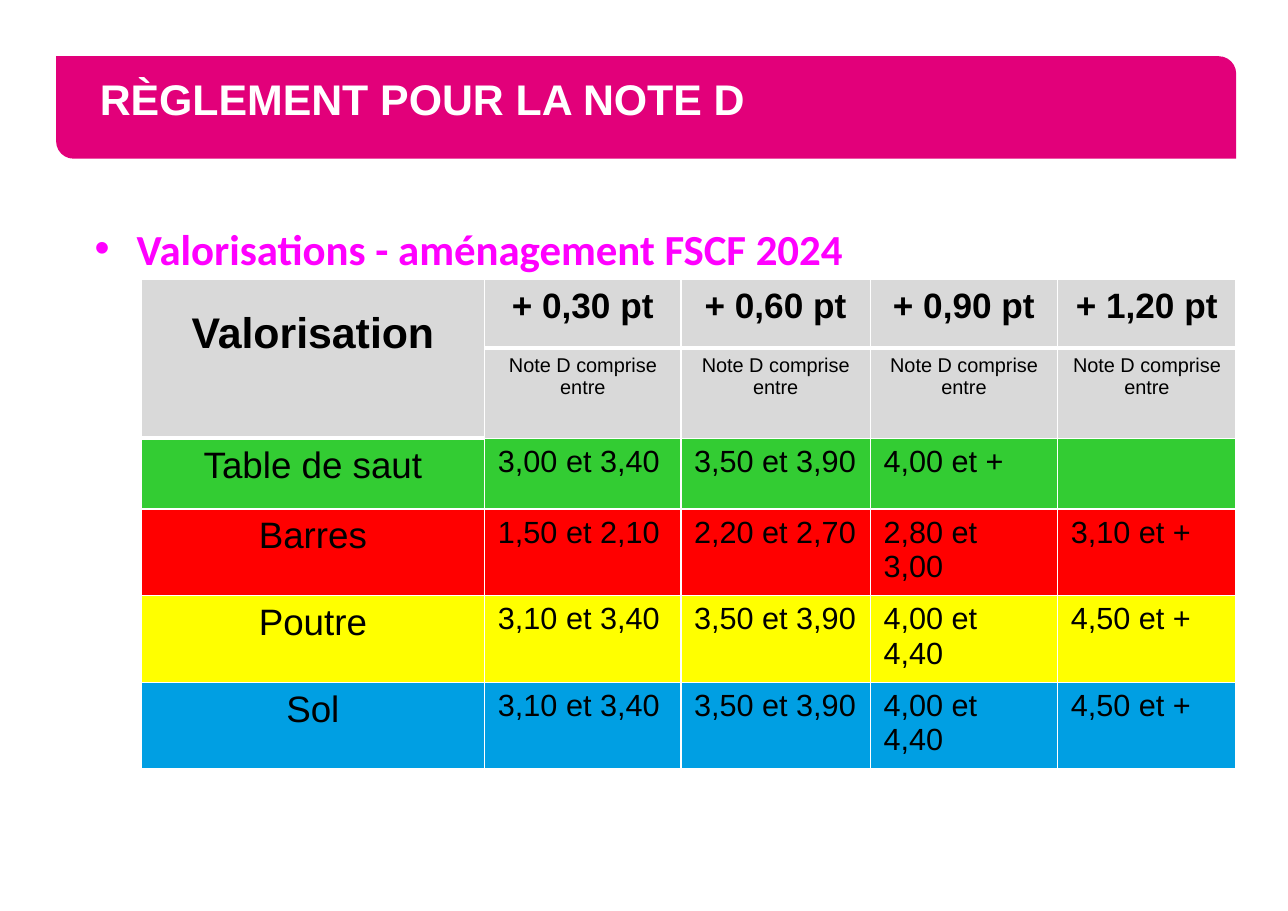
from lxml.etree import SubElement
from pptx import Presentation
from pptx.dml.color import RGBColor
from pptx.enum.shapes import MSO_SHAPE
from pptx.enum.text import MSO_ANCHOR, PP_ALIGN
from pptx.oxml import parse_xml
from pptx.oxml.ns import nsdecls, qn
from pptx.util import Inches, Pt

WIDTH, HEIGHT = 11.69, 8.27
BLACK, WHITE, PINK, MAGENTA, GREY = "000000", "FFFFFF", "E2007A", "FF00FF", "D9D9D9"

# Shares of the slide, in percent
COLUMNS = [26.69, 15.23, 14.71, 14.54, 13.86]
ROWS = [7.5, 9.79] + [7.74] * 4
BONUSES = ["+ 0,30 pt", "+ 0,60 pt", "+ 0,90 pt", "+ 1,20 pt"]
APPARATUS = [
    ("Table de saut", "33CC33", ["3,00 et 3,40", "3,50 et 3,90", "4,00 et +", ""]),
    ("Barres", "FF0000", ["1,50 et 2,10", "2,20 et 2,70", "2,80 et 3,00", "3,10 et +"]),
    ("Poutre", "FFFF00", ["3,10 et 3,40", "3,50 et 3,90", "4,00 et 4,40", "4,50 et +"]),
    ("Sol", "009FE3", ["3,10 et 3,40", "3,50 et 3,90", "4,00 et 4,40", "4,50 et +"]),
]


def across(percent):
    return Inches(WIDTH * percent / 100)


def down(percent):
    return Inches(HEIGHT * percent / 100)


def color(code):
    return RGBColor.from_string(code)


def set_margins(target, horizontal, vertical):
    target.margin_left = target.margin_right = Inches(horizontal)
    target.margin_top = target.margin_bottom = Inches(vertical)


def write(text_frame, text, size, font="Arial", ink=BLACK, bold=False,
          align=PP_ALIGN.LEFT, spacing=None, bullet=None):
    paragraph = text_frame.paragraphs[0]
    if bullet:
        properties = paragraph._p.get_or_add_pPr()
        properties.set("marL", str(Inches(0.38)))
        properties.set("indent", str(-Inches(0.38)))
        SubElement(properties, qn("a:buFont"), typeface="Arial")
        SubElement(properties, qn("a:buChar"), char=bullet)
    paragraph.alignment = align
    if spacing:
        paragraph.line_spacing = spacing
    target = paragraph
    if text:
        target = paragraph.add_run()
        target.text = text
    target.font.name = font
    target.font.size = Pt(size)
    target.font.bold = bold
    target.font.color.rgb = color(ink)


def add_banner(slide, text):
    shape = slide.shapes.add_shape(MSO_SHAPE.ROUND_2_DIAG_RECTANGLE, across(4.36),
                                   down(6.17), across(91.62), down(11.25))
    shape.adjustments[0], shape.adjustments[1] = 0, 0.17
    shape.shadow.inherit = False
    shape.fill.solid()
    shape.fill.fore_color.rgb = color(PINK)
    shape.line.fill.background()
    frame = shape.text_frame
    set_margins(frame, 0.35, 0.05)
    frame.vertical_anchor = MSO_ANCHOR.MIDDLE
    write(frame, text, 28, ink=WHITE, bold=True, spacing=Pt(22))


def add_subtitle(slide, text):
    box = slide.shapes.add_textbox(across(6.42), down(23.7), across(91.62), down(7.13))
    frame = box.text_frame
    frame.word_wrap = True
    set_margins(frame, 0.11, 0.06)
    write(frame, text, 28, font="Calibri", ink=MAGENTA, bold=True, bullet="•")


def set_borders(cell, bottom):
    properties = cell._tc.get_or_add_tcPr()
    widths = {"lnL": 1, "lnR": 1, "lnT": 1, "lnB": bottom}
    for position, (side, points) in enumerate(widths.items()):
        properties.insert(position, parse_xml(
            f'<a:{side} {nsdecls("a")} w="{Pt(points)}"><a:solidFill>'
            f'<a:srgbClr val="{WHITE}"/></a:solidFill></a:{side}>'))


def fill_cell(cell, text, size, fill, bottom=1, **text_format):
    set_margins(cell, 0.12, 0.06)
    cell.fill.solid()
    cell.fill.fore_color.rgb = color(fill)
    set_borders(cell, bottom)
    write(cell.text_frame, text, size, **text_format)


def add_score_table(slide):
    table = slide.shapes.add_table(len(ROWS), len(COLUMNS), across(10.95), down(30.71),
                                   across(sum(COLUMNS)), down(sum(ROWS))).table
    for column, share in zip(table.columns, COLUMNS):
        column.width = across(share)
    for row, share in zip(table.rows, ROWS):
        row.height = down(share)

    centered = PP_ALIGN.CENTER
    table.cell(0, 0).merge(table.cell(1, 0))
    fill_cell(table.cell(0, 0), "Valorisation", 28, GREY, bottom=3, bold=True,
              align=centered, spacing=1.5)
    for column, bonus in enumerate(BONUSES, start=1):
        fill_cell(table.cell(0, column), bonus, 23, GREY, bottom=3, bold=True,
                  align=centered)
        fill_cell(table.cell(1, column), "Note D comprise entre", 13, GREY, align=centered)
    for row, (name, fill, ranges) in enumerate(APPARATUS, start=2):
        fill_cell(table.cell(row, 0), name, 24, fill, align=centered)
        for column, score_range in enumerate(ranges, start=1):
            fill_cell(table.cell(row, column), score_range, 20, fill)


def main():
    presentation = Presentation()
    presentation.slide_width, presentation.slide_height = Inches(WIDTH), Inches(HEIGHT)
    slide = presentation.slides.add_slide(presentation.slide_layouts[6])
    add_banner(slide, "RÈGLEMENT POUR LA NOTE D")
    add_subtitle(slide, "Valorisations - aménagement FSCF 2024")
    add_score_table(slide)
    presentation.save("out.pptx")


if __name__ == "__main__":
    main()
